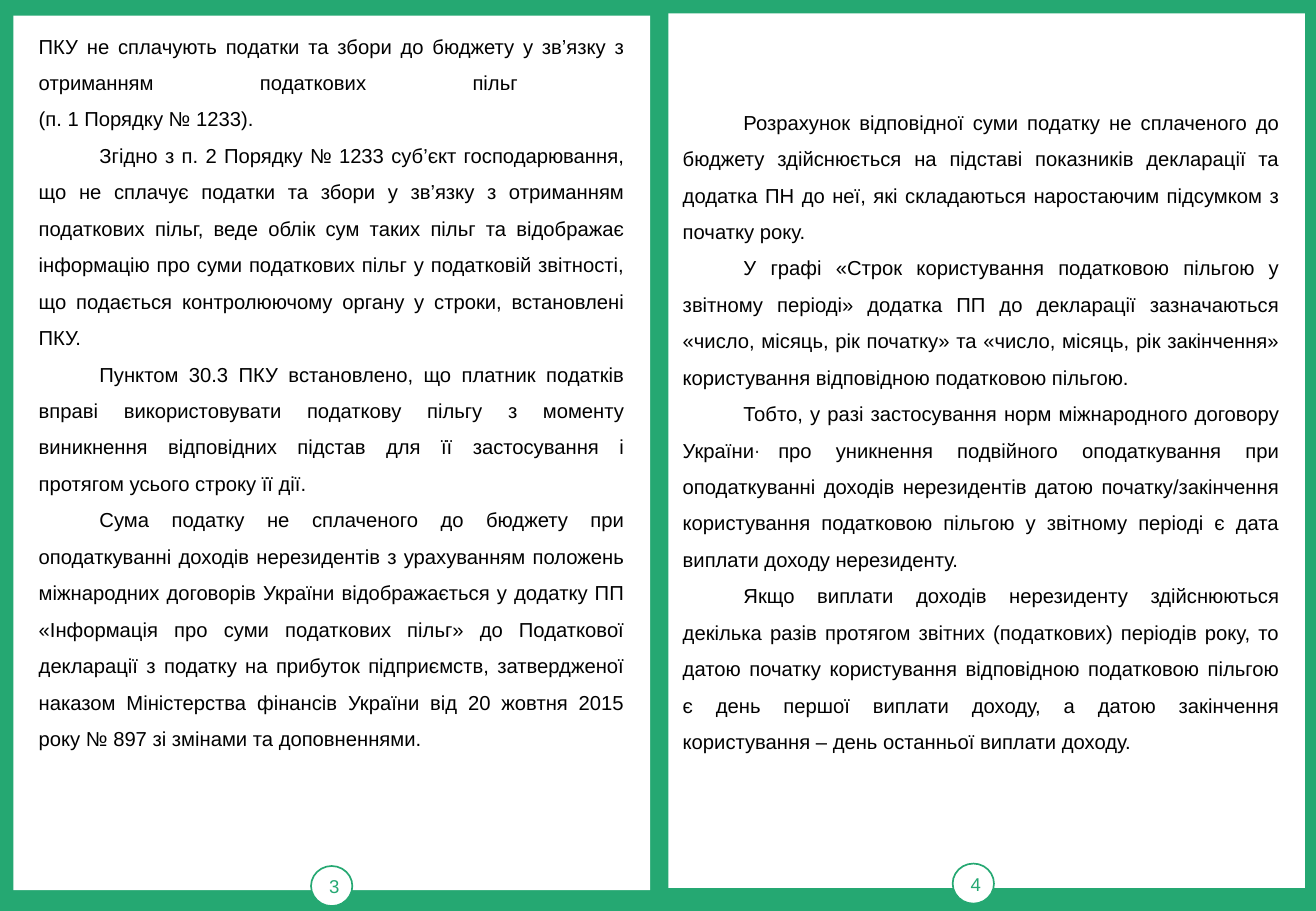
from pptx import Presentation
from pptx.dml.color import RGBColor
from pptx.enum.shapes import MSO_SHAPE as Shape
from pptx.enum.text import MSO_ANCHOR as Anchor, PP_ALIGN as Align
from pptx.util import Inches, Pt

THEME = {
    "green": RGBColor.from_string("25A872"),
    "paper": RGBColor.from_string("FFFFFF"),
    "ink": RGBColor.from_string("000000"),
    "dot": RGBColor.from_string("333333"),
    "font": "Arial",
    "body": Pt(12),
    "number": Pt(11),
}
PAPER_SIZE = (5.24, 7.2)
BADGE_SIZE = (0.34, 0.33)
BADGE_DROP = 7.0  # from the top of the paper to the top of its number
FIRST_LINE = 0.5

LEFT_TEXT = [
    "ПКУ не сплачують податки та збори до бюджету у зв’язку з отриманням податкових пільг \v"
    "(п. 1 Порядку № 1233).",
    "Згідно з п. 2 Порядку № 1233 суб’єкт господарювання, що не сплачує податки та збори "
    "у зв’язку з отриманням податкових пільг, веде облік сум таких пільг та відображає "
    "інформацію про суми податкових пільг у податковій звітності, що подається "
    "контролюючому органу у строки, встановлені ПКУ.",
    "Пунктом 30.3 ПКУ встановлено, що платник податків вправі використовувати податкову "
    "пільгу з моменту виникнення відповідних підстав для її застосування і протягом "
    "усього строку її дії.",
    "Сума податку не сплаченого до бюджету при оподаткуванні доходів нерезидентів "
    "з урахуванням положень міжнародних договорів України відображається у додатку ПП "
    "«Інформація про суми податкових пільг» до Податкової декларації з податку на прибуток "
    "підприємств, затвердженої наказом Міністерства фінансів України від 20 жовтня 2015 "
    "року № 897 зі змінами та доповненнями.",
]
RIGHT_TEXT = [
    "Розрахунок відповідної суми податку не сплаченого до бюджету здійснюється на підставі "
    "показників декларації та додатка ПН до неї, які складаються наростаючим підсумком "
    "з початку року.",
    "У графі «Строк користування податковою пільгою у звітному періоді» додатка ПП "
    "до декларації зазначаються «число, місяць, рік початку» та «число, місяць, рік "
    "закінчення» користування відповідною податковою пільгою.",
    "Тобто, у разі застосування норм міжнародного договору України про уникнення "
    "подвійного оподаткування при оподаткуванні доходів нерезидентів датою "
    "початку/закінчення користування податковою пільгою у звітному періоді є дата виплати "
    "доходу нерезиденту.",
    "Якщо виплати доходів нерезиденту здійснюються декілька разів протягом звітних "
    "(податкових) періодів року, то датою початку користування відповідною податковою "
    "пільгою є день першої виплати доходу, а датою закінчення користування – день "
    "останньої виплати доходу.",
]

deck = Presentation()
deck.slide_width, deck.slide_height = Inches(10.83), Inches(7.5)
page = deck.slides.add_slide(deck.slide_layouts[6])
page.background.fill.solid()
page.background.fill.fore_color.rgb = THEME["green"]


def add_filled(kind, left, top, size):
    """Add a white shape without line or shadow."""
    shape = page.shapes.add_shape(kind, *map(Inches, (left, top, *size)))
    shape.shadow.inherit = False
    shape.fill.solid()
    shape.fill.fore_color.rgb = THEME["paper"]
    shape.line.fill.background()
    return shape


def write(para, text, size, color, **layout):
    """Put text in a paragraph and apply its font and paragraph settings."""
    para.text = text
    for name, value in layout.items():
        setattr(para, name, value)
    for span in para.runs:
        for name, value in {"name": THEME["font"], "size": size}.items():
            setattr(span.font, name, value)
        span.font.color.rgb = color


# Two sheets of paper, each with a round page number on its lower edge
for number, left, top, badge_left in (("3", 0.11, 0.13, 2.56), ("4", 5.5, 0.11, 7.84)):
    add_filled(Shape.RECTANGLE, left, top, PAPER_SIZE)
    badge = add_filled(Shape.OVAL, badge_left, top + BADGE_DROP, BADGE_SIZE)
    badge.line.color.rgb = THEME["green"]
    badge.line.width = Pt(1)
    frame = badge.text_frame
    frame.vertical_anchor = Anchor.MIDDLE
    frame.margin_top = frame.margin_bottom = 0
    write(frame.paragraphs[0], number, THEME["number"], THEME["green"], alignment=Align.CENTER)

# Each text: place, anchor, line spacing, colour, index of the first indented paragraph
texts = [
    ((5.61, 0.23, 5.02, 6.84), Anchor.MIDDLE, 1.15, THEME["dot"], 0, ["."]),
    ((5.52, 0.12, 5.11, 6.77), Anchor.MIDDLE, 1.5, THEME["ink"], 0, RIGHT_TEXT),
    ((0.22, 0.13, 5.02, 7.2), Anchor.TOP, 1.5, THEME["ink"], 1, LEFT_TEXT),
]
for place, anchor, spacing, color, first_indented, paragraphs in texts:
    frame = page.shapes.add_textbox(*map(Inches, place)).text_frame
    frame.word_wrap = True
    frame.vertical_anchor = anchor
    for index, text in enumerate(paragraphs):
        para = frame.add_paragraph() if index else frame.paragraphs[0]
        write(para, text, THEME["body"], color, alignment=Align.JUSTIFY, line_spacing=spacing)
        if index >= first_indented:
            para._p.get_or_add_pPr().set("indent", str(Inches(FIRST_LINE)))

deck.save("out.pptx")
